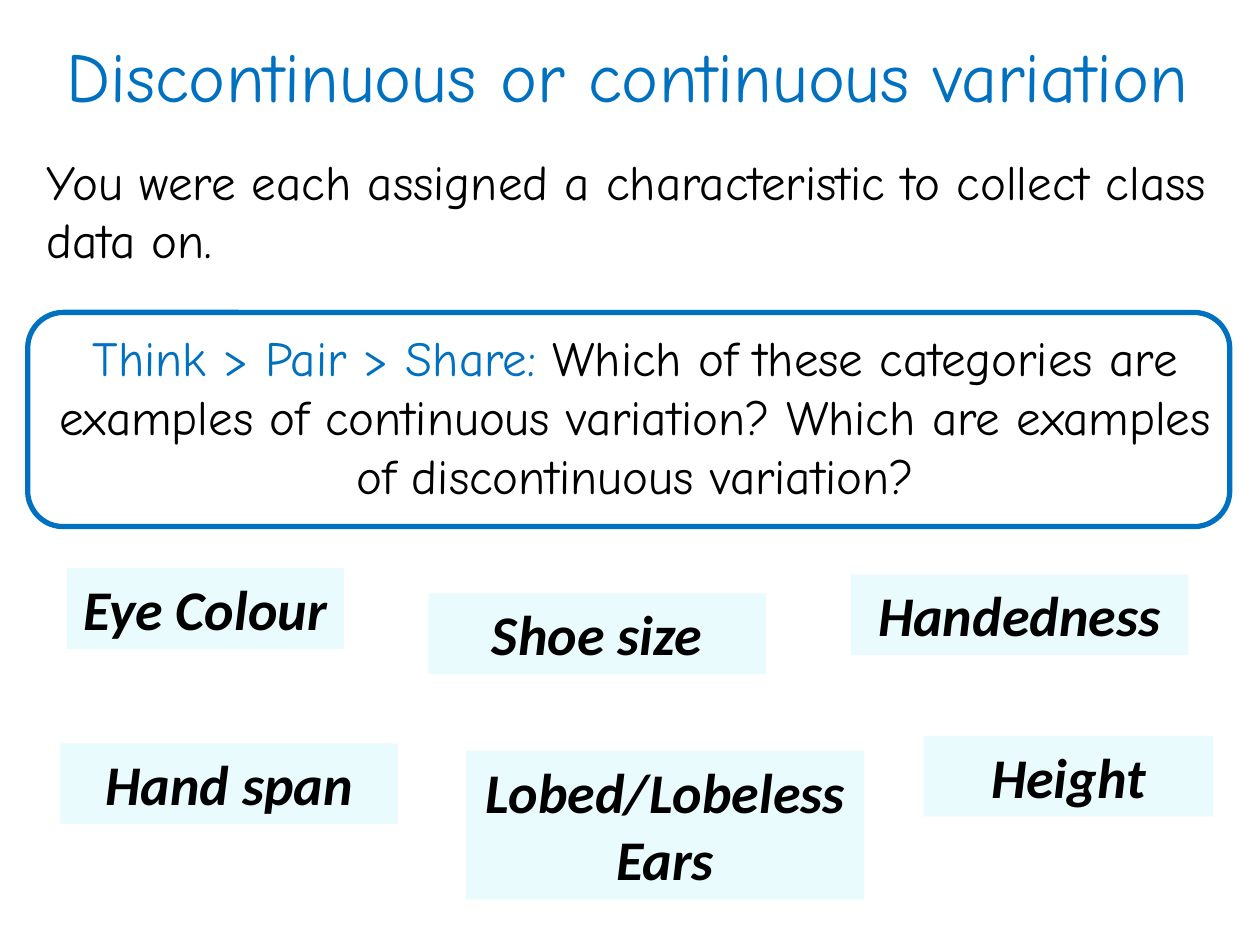
"""Build a class slide on discontinuous and continuous variation."""
from pptx import Presentation
from pptx.dml.color import RGBColor as RGB
from pptx.enum.shapes import MSO_SHAPE as Shape
from pptx.enum.text import MSO_ANCHOR as Anchor, MSO_AUTO_SIZE as Fit, PP_ALIGN as Align
from pptx.util import Inches, Pt

COLS, ROWS = 100, 75
WIDE, HIGH = Inches(10), Inches(7.5)
BLUE, BLACK, PALE = "0070C0", "000000", "E9FBFD"
TITLE = {"name": "Comic Neue", "size": Pt(40)}
BODY = {"name": "Comic Neue", "size": Pt(28)}
CARD = {"name": "Calibri", "size": Pt(32), "bold": True, "italic": True}
FRAME = {"word_wrap": True, "auto_size": Fit.SHAPE_TO_FIT_TEXT, "vertical_anchor": Anchor.TOP}
CARDS = [
    ("Eye Colour", 5.3, 45.1, 22, 6.4),
    ("Handedness", 67.5, 45.6, 26.8, 6.4),
    ("Shoe size", 34, 47.1, 26.8, 6.4),
    ("Height", 73.3, 58.4, 23, 6.4),
    ("Hand span", 4.8, 59, 26.8, 6.4),
    ("Lobed/Lobeless Ears", 37, 59.6, 31.6, 11.8),
]


def paint(form, color):
    """Give a fill or line a solid colour from a hex string."""
    form.solid()
    form.fore_color.rgb = RGB.from_string(color)


def place(col, row, cols, rows):
    """Turn grid columns and rows into slide lengths."""
    across, down = WIDE / COLS, HIGH / ROWS
    return int(col * across), int(row * down), int(cols * across), int(rows * down)


def apply(item, style):
    """Set every attribute named in a style."""
    for key, value in style.items():
        setattr(item, key, value)


def write(par, runs, font, align=Align.CENTER, gap=0):
    """Fill a paragraph with coloured runs."""
    apply(par, {"alignment": align, "space_before": Pt(gap)})
    for text, color in runs:
        run = par.add_run()
        run.text = text
        apply(run.font, font)
        paint(run.font.fill, color)


def add_text(slide, *spot):
    """Add a wrapping text box and return its frame."""
    frame = slide.shapes.add_textbox(*place(*spot)).text_frame
    apply(frame, FRAME)
    return frame


def add_panel(slide, *spot):
    """Add the rounded outline around the question."""
    panel = slide.shapes.add_shape(Shape.ROUNDED_RECTANGLE, *place(*spot))
    panel.shadow.inherit = False
    panel.fill.background()
    paint(panel.line.fill, BLUE)
    panel.line.width = Pt(3)


def add_card(slide, text, *spot):
    """Add a pale card that names a characteristic."""
    card = slide.shapes.add_shape(Shape.RECTANGLE, *place(*spot))
    card.shadow.inherit = False
    paint(card.fill, PALE)
    card.line.fill.background()
    apply(card.text_frame, FRAME)
    write(card.text_frame.paragraphs[0], [(text, BLACK)], CARD)


def main():
    """Build and save the slide."""
    deck = Presentation()
    apply(deck, {"slide_width": WIDE, "slide_height": HIGH})
    slide = deck.slides.add_slide(deck.slide_layouts[6])
    add_panel(slide, 2.2, 24.8, 95.4, 17)
    title = add_text(slide, 0.8, 2.1, 98, 7.7)
    write(title.paragraphs[0], [("Discontinuous or continuous variation", BLUE)], TITLE)
    body = add_text(slide, 2.7, 11.5, 95.4, 29.3)
    task = "You were each assigned a characteristic to collect class data on."
    write(body.paragraphs[0], [(task, BLACK)], BODY, Align.LEFT)
    ask = ("Which of these categories are examples of continuous variation? "
           "Which are examples of discontinuous variation?")
    write(body.add_paragraph(), [("Think > Pair > Share: ", BLUE), (ask, BLACK)], BODY, gap=33.5)
    for card in CARDS:
        add_card(slide, *card)
    deck.save("out.pptx")


if __name__ == "__main__":
    main()
